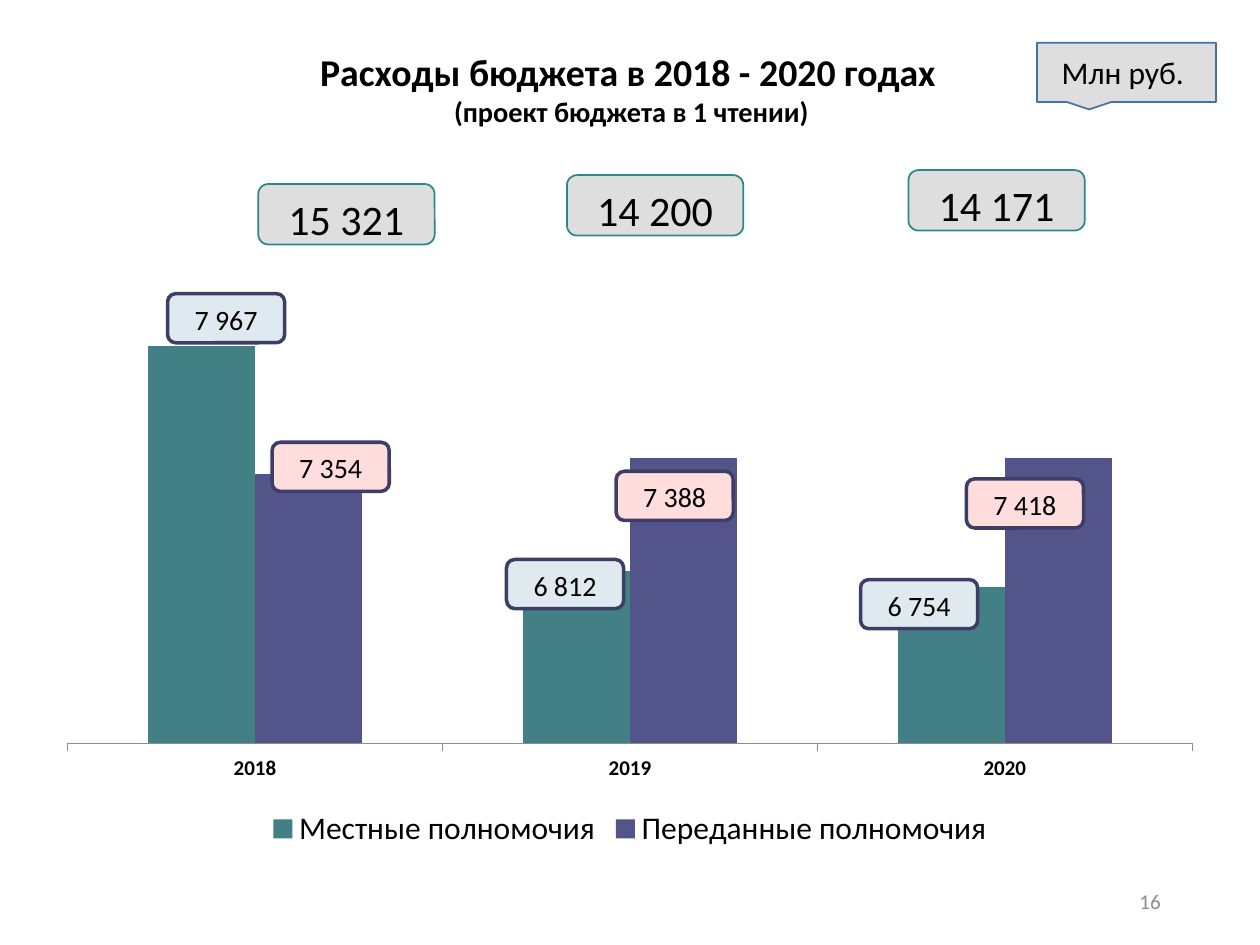
from lxml.etree import SubElement
from pptx import Presentation
from pptx.chart.data import CategoryChartData
from pptx.dml.color import RGBColor
from pptx.enum.chart import XL_CHART_TYPE, XL_LEGEND_POSITION, XL_TICK_MARK
from pptx.enum.shapes import MSO_SHAPE
from pptx.enum.text import MSO_ANCHOR, PP_ALIGN
from pptx.oxml.ns import qn
from pptx.util import Inches, Pt

WIDTH, HEIGHT = Inches(10), Inches(7.5)
FONT = "Calibri"
COLORS = {
    "text": "000000", "muted": "8C8C8C", "gray": "DEDEDE",
    "local": "438086", "passed": "53548A",
    "blue": "DEE9F0", "pink": "FFDDDD", "edge": "3D3E66",
    "teal": "2C878A", "note": "43739E",
}
YEARS = ["2018", "2019", "2020"]
LOCAL = [7967, 6812, 6754]
PASSED = [7354, 7388, 7418]
TOTAL = [15321, 14200, 14171]
LOCAL_AT = [(13.3, 31.07), (40.2, 59.2), (68.3, 61.33)]
PASSED_AT = [(21.6, 46.8), (48.9, 49.87), (76.7, 50.67)]
TOTAL_AT = [(20.5, 19.47), (45, 18.53), (72.1, 18)]


def color(name):
    return RGBColor.from_string(COLORS[name])


def area(left, top, width, height):
    return (int(WIDTH * left / 100), int(HEIGHT * top / 100),
            int(WIDTH * width / 100), int(HEIGHT * height / 100))


def style(font, size, name="text", bold=False):
    font.name, font.size, font.bold = FONT, Pt(size), bold
    font.color.rgb = color(name)


def write(shape, lines, align=PP_ALIGN.CENTER, anchor=MSO_ANCHOR.TOP,
          ink="text", bold=False):
    frame = shape.text_frame
    frame.word_wrap = True
    frame.vertical_anchor = anchor
    para = frame.paragraphs[0]
    para.alignment = align
    for index, (text, size) in enumerate(lines):
        if index:
            para.add_line_break()
        run = para.add_run()
        run.text = text
        style(run.font, size, ink, bold)


def add_text(slide, box, lines, **options):
    write(slide.shapes.add_textbox(*area(*box)), lines, **options)


def add_box(slide, kind, box, text, size, fill, edge, line, **options):
    shape = slide.shapes.add_shape(kind, *area(*box))
    shape.shadow.inherit = False
    shape.fill.solid()
    shape.fill.fore_color.rgb = color(fill)
    shape.line.color.rgb = color(edge)
    shape.line.width = Pt(line)
    write(shape, [(text, size)], **options)


def add_tags(slide, values, places, box, size, fill, edge, line):
    for value, place in zip(values, places):
        text = f"{value:,}".replace(",", " ")
        add_box(slide, MSO_SHAPE.ROUNDED_RECTANGLE, place + box,
                text, size, fill, edge, line)


def set_plot(chart, **shares):
    plot = chart._chartSpace.chart.plotArea
    for old in plot.findall(qn("c:layout")):
        plot.remove(old)
    layout = SubElement(plot, qn("c:layout"))
    plot.insert(0, layout)
    manual = SubElement(layout, qn("c:manualLayout"))
    parts = {"layoutTarget": "inner", "xMode": "edge", "yMode": "edge"}
    parts.update({tag: share / 100 for tag, share in shares.items()})
    for tag, value in parts.items():
        SubElement(manual, qn(f"c:{tag}")).set("val", str(value))


def percent(values):
    return [round(100 * value / max(LOCAL)) for value in values]


def add_bars(slide, box):
    data = CategoryChartData(number_format="#,##0")
    data.categories = YEARS
    data.add_series("Местные полномочия", percent(LOCAL))
    data.add_series("Переданные полномочия", percent(PASSED))
    chart = slide.shapes.add_chart(
        XL_CHART_TYPE.COLUMN_CLUSTERED, *area(*box), data).chart
    style(chart.font, 18)
    chart.has_title = False
    chart.has_legend = True
    chart.legend.position = XL_LEGEND_POSITION.BOTTOM
    chart.legend.include_in_layout = False
    style(chart.legend.font, 18)
    bars = chart.plots[0]
    bars.gap_width, bars.overlap = 150, 0
    bars.vary_by_categories = False
    for series, name in zip(bars.series, ("local", "passed")):
        series.format.fill.solid()
        series.format.fill.fore_color.rgb = color(name)
        series.invert_if_negative = False
    years = chart.category_axis
    years.major_tick_mark = XL_TICK_MARK.OUTSIDE
    years.format.line.color.rgb = color("muted")
    style(years.tick_labels.font, 12, bold=True)
    scale = chart.value_axis
    scale.minimum_scale, scale.maximum_scale = 75.3, 100.5
    scale.has_major_gridlines = False
    scale.visible = False
    set_plot(chart, x=2, y=18, w=96, h=64.4)


def main():
    deck = Presentation()
    deck.slide_width, deck.slide_height = WIDTH, HEIGHT
    slide = deck.slides.add_slide(deck.slide_layouts[6])
    add_text(slide, (1.8, 4.53, 96.1, 7.07),
             [("Расходы бюджета в 2018 - 2020 годах", 21.6),
              (" (проект бюджета в 1 чтении)", 16.2)], bold=True)
    add_bars(slide, (3.5, 23.73, 93, 66.67))
    add_text(slide, (70.6, 92.67, 22.5, 5.33), [("16", 12)],
             align=PP_ALIGN.RIGHT, anchor=MSO_ANCHOR.MIDDLE, ink="muted")
    add_box(slide, MSO_SHAPE.RECTANGULAR_CALLOUT, (82.3, 4.53, 14.2, 6.27),
            "Млн руб. ", 18, "gray", "note", 1, anchor=MSO_ANCHOR.MIDDLE)
    add_tags(slide, PASSED, PASSED_AT, (9.3, 5.2), 16, "pink", "edge", 2)
    add_tags(slide, LOCAL, LOCAL_AT, (9.3, 5.2), 16, "blue", "edge", 2)
    add_tags(slide, TOTAL, TOTAL_AT, (14, 6.4), 24, "gray", "teal", 1)
    deck.save("out.pptx")


if __name__ == "__main__":
    main()
